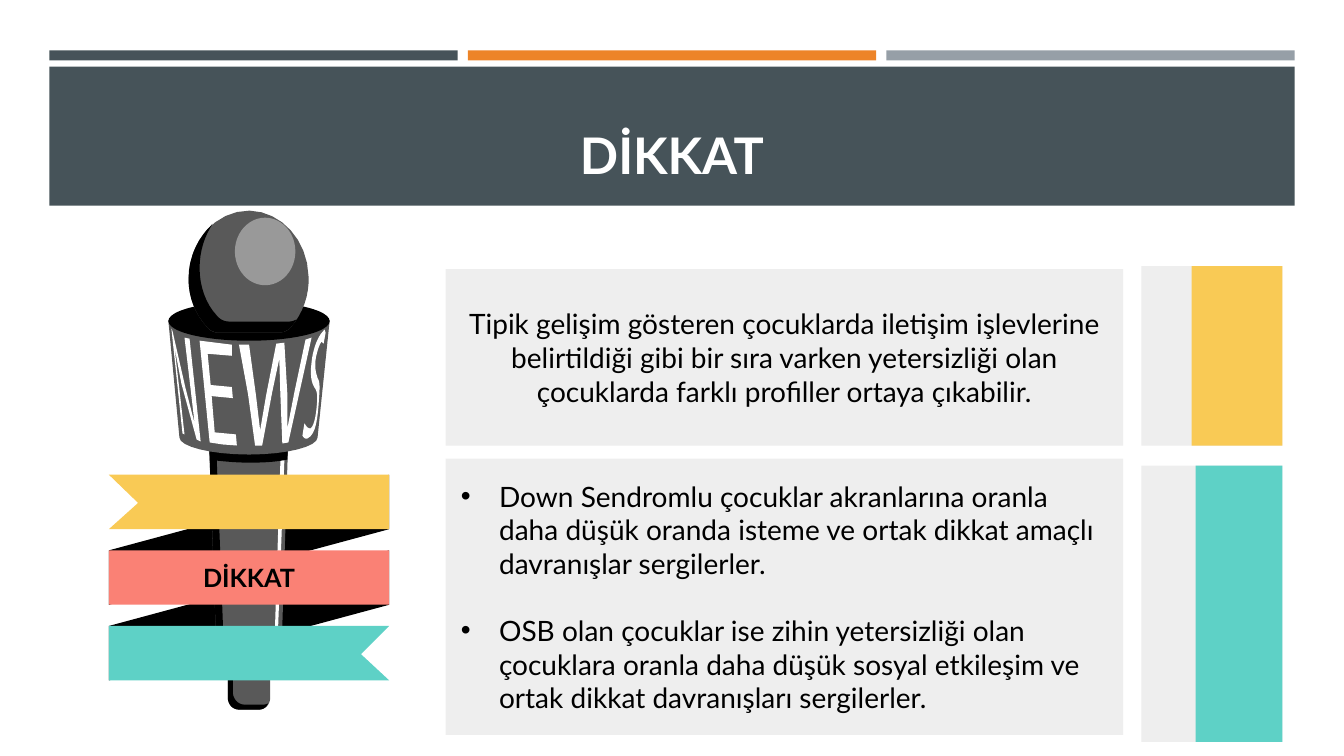
from lxml.etree import SubElement
from pptx import Presentation
from pptx.dml.color import RGBColor
from pptx.enum.shapes import MSO_SHAPE
from pptx.enum.text import MSO_ANCHOR, MSO_AUTO_SIZE, PP_ALIGN
from pptx.oxml.ns import qn
from pptx.util import Inches, Pt

HUES = {
    "slate": "465359", "orange": "ED8428", "steel": "969FA7",
    "pale": "EEEEEE", "yellow": "F9CA55", "coral": "FA8175",
    "teal": "5ED1C6", "dark": "595959", "glow": "999999",
    "black": "000000", "white": "FFFFFF",
}
FONT = "Lato"
RIBBON = (1.08, 4.71, 2.78, 0.54)
STEP = 0.75

# Microphone outlines: pairs are line ends, sixes are curves
STEM = [(0.59, 2.74), (0.59, 4.83), (0.59, 4.9, 0.64, 4.95, 0.7, 4.95),
        (0.9, 4.95), (0.96, 4.95, 1.01, 4.9, 1.01, 4.83), (1.01, 2.74)]
STEM_SHADE = [(0.59, 2.74), (0.59, 4.83), (0.59, 4.9, 0.64, 4.95, 0.7, 4.95),
              (0.9, 4.95), (0.94, 4.95, 0.97, 4.93, 0.99, 4.89),
              (0.98, 4.89, 0.97, 4.9, 0.95, 4.9), (0.75, 4.9),
              (0.69, 4.9, 0.64, 4.84, 0.64, 4.78), (0.64, 2.74)]
GRIP = [(0.4, 2.22), (0.48, 4.43), (0.48, 4.47, 0.62, 4.5, 0.8, 4.5),
        (0.98, 4.5, 1.12, 4.47, 1.12, 4.43), (1.19, 2.22)]
SHINE = [(1.12, 2.22), (1.05, 4.36), (1.08, 4.36), (1.16, 2.22)]
GRIP_SHADE = [(0.4, 2.22), (0.41, 2.47), (0.48, 4.43),
              (0.48, 4.47, 0.62, 4.5, 0.8, 4.5),
              (0.97, 4.5, 1.12, 4.47, 1.12, 4.44), (1.12, 4.39),
              (1.06, 4.4, 0.97, 4.41, 0.87, 4.41),
              (0.69, 4.41, 0.55, 4.39, 0.55, 4.35), (0.48, 2.48),
              (0.58, 2.49, 0.68, 2.5, 0.8, 2.5), (0.83, 2.5),
              (0.96, 2.5, 1.08, 2.49, 1.18, 2.47), (1.19, 2.22)]
CUP = [(0, 1.09), (0.11, 2.25), (0.11, 2.34, 0.42, 2.42, 0.8, 2.42),
       (1.18, 2.42, 1.48, 2.34, 1.48, 2.25), (1.6, 1.09)]
NEWS = [
    [(0.03, 1.17), (0.14, 2.21), (0.16, 2.22), (0.11, 1.78), (0.06, 1.35),
     (0.13, 1.72), (0.28, 2.27), (0.32, 2.29), (0.21, 1.27), (0.16, 1.26),
     (0.21, 1.68), (0.26, 2.11), (0.17, 1.76), (0.04, 1.19)],
    [(0.31, 1.29), (0.41, 2.3), (0.54, 2.32), (0.68, 2.33), (0.67, 2.22),
     (0.46, 2.2), (0.43, 1.84), (0.64, 1.86), (0.63, 1.75), (0.42, 1.73),
     (0.39, 1.42), (0.63, 1.44), (0.63, 1.33)],
    [(1.42, 1.26), (1.36, 1.28), (1.25, 1.8), (1.18, 2.16), (1.18, 1.82),
     (1.15, 1.31), (1.07, 1.32), (0.97, 1.83), (0.91, 2.18), (0.87, 1.84),
     (0.8, 1.33), (0.7, 1.33), (0.79, 1.82), (0.86, 2.33), (0.93, 2.33),
     (1.03, 1.8), (1.1, 1.47), (1.11, 1.8), (1.13, 2.31), (1.19, 2.3)],
    [(1.55, 1.18), (1.54, 1.19), (1.47, 1.26, 1.43, 1.4, 1.42, 1.51),
     (1.4, 1.66, 1.43, 1.73, 1.46, 1.77), (1.48, 1.81, 1.48, 1.86, 1.47, 1.96),
     (1.46, 2.06, 1.44, 2.14, 1.41, 2.16), (1.38, 2.16, 1.37, 2.14, 1.35, 2.11),
     (1.33, 2.23), (1.34, 2.25, 1.36, 2.27, 1.38, 2.26),
     (1.47, 2.22, 1.48, 2.03, 1.49, 1.93), (1.5, 1.78, 1.51, 1.7, 1.48, 1.66),
     (1.47, 1.62, 1.45, 1.58, 1.46, 1.48), (1.47, 1.41, 1.5, 1.32, 1.52, 1.3),
     (1.54, 1.32), (1.56, 1.21)],
]
HEAD = [(0.8, 0), (0.47, 0, 0.2, 0.3, 0.2, 0.68),
        (0.2, 0.86, 0.27, 1.03, 0.38, 1.15), (0.41, 1.19, 0.45, 1.21, 0.5, 1.21),
        (1.09, 1.21), (1.14, 1.21, 1.19, 1.19, 1.22, 1.15),
        (1.33, 1.02, 1.4, 0.84, 1.39, 0.65), (1.38, 0.29, 1.12, 0.01, 0.81, 0)]
HEAD_SHADE = [(0.44, 0.13), (0.3, 0.26, 0.2, 0.45, 0.2, 0.68),
              (0.2, 0.86, 0.27, 1.03, 0.38, 1.15),
              (0.41, 1.19, 0.46, 1.21, 0.5, 1.21), (1.09, 1.21),
              (1.14, 1.21, 1.19, 1.19, 1.22, 1.15),
              (1.24, 1.13, 1.26, 1.1, 1.27, 1.08),
              (1.25, 1.09, 1.22, 1.1, 1.2, 1.1), (0.6, 1.1),
              (0.56, 1.1, 0.51, 1.08, 0.48, 1.04),
              (0.37, 0.92, 0.31, 0.75, 0.31, 0.57),
              (0.31, 0.4, 0.36, 0.25, 0.44, 0.13)]


def tint(shape, hue):
    shape.fill.solid()
    shape.fill.fore_color.rgb = RGBColor.from_string(HUES[hue])


def paint(shape, hue):
    tint(shape, hue)
    shape.line.fill.background()
    shape.shadow.inherit = False
    return shape


def block(slide, box, hue, kind=MSO_SHAPE.RECTANGLE):
    return paint(slide.shapes.add_shape(kind, *map(Inches, box)), hue)


def curve(start, bend, steps=8):
    xs, ys = (start[0], *bend[::2]), (start[1], *bend[1::2])
    for i in range(1, steps + 1):
        t = i / steps
        parts = ((1 - t) ** 3, 3 * t * (1 - t) ** 2, 3 * t * t * (1 - t), t ** 3)
        yield tuple(sum(p * v for p, v in zip(parts, vs)) for vs in (xs, ys))


def outline(slide, left, top, hue, marks):
    dots = [marks[0]]
    for mark in marks[1:]:
        dots += [mark] if len(mark) == 2 else curve(dots[-1], mark)
    spots = [(Inches(left + x), Inches(top + y)) for x, y in dots]
    form = slide.shapes.build_freeform(*spots[0])
    form.add_line_segments(spots[1:], close=True)
    return paint(form.convert_to_shape(), hue)


def set_text(shape, lines, size, hue="black", bold=False, side=0.15, edge=0.1,
             align=PP_ALIGN.CENTER, anchor=MSO_ANCHOR.MIDDLE, bullet=False):
    frame = shape.text_frame
    frame.text = "\n".join(lines)
    frame.word_wrap = True
    frame.auto_size = MSO_AUTO_SIZE.NONE
    frame.vertical_anchor = anchor
    frame.margin_left = frame.margin_right = Inches(side)
    frame.margin_top = frame.margin_bottom = Inches(edge)
    for i, para in enumerate(frame.paragraphs):
        para.alignment = align
        para.space_before = Pt(24 if i else 0)
        if bullet:
            props = para._p.get_or_add_pPr()
            props.set("marL", str(Inches(0.38)))
            props.set("indent", str(-Inches(0.38)))
            SubElement(props, qn("a:buFont"), typeface="Arial")
            SubElement(props, qn("a:buChar"), char="•")
        for run in para.runs:
            run.font.name, run.font.size, run.font.bold = FONT, Pt(size), bold
            run.font.color.rgb = RGBColor.from_string(HUES[hue])


def place(shape, box):
    shape.left, shape.top, shape.width, shape.height = map(Inches, box)


# Three bars over a title band
def header(slide, box):
    left, top, wide, high = box
    for i, hue in enumerate(("slate", "orange", "steel")):
        block(slide, (left + i * 4.15, top, 4.05, 0.1), hue)
    band = block(slide, (left, top + 0.16, wide, high - 0.16), "slate")
    title = slide.shapes.title
    title.element.getparent().insert(2, band.element)
    place(title, (left + 0.15, top + 0.3, wide - 0.3, 1.08))
    set_text(title, ["DİKKAT"], 36, "white", True, 0.1, 0.05,
             anchor=MSO_ANCHOR.BOTTOM)


# Black ribbon folds behind the microphone
def folds(slide, box):
    left, top, wide, high = box
    for i in range(2):
        outline(slide, left, top + i * STEP, "black",
                [(wide, 0), (0, STEP), (0, STEP + high), (wide, high)])


def mic(slide, left, top):
    for hue, marks in (("dark", STEM), ("black", STEM_SHADE), ("dark", GRIP),
                       ("white", SHINE), ("black", GRIP_SHADE), ("dark", CUP),
                       *(("white", sign) for sign in NEWS)):
        outline(slide, left, top, hue, marks)
    block(slide, (left, top + 0.9, 1.6, 0.39), "black", MSO_SHAPE.OVAL)
    outline(slide, left, top, "dark", HEAD)
    outline(slide, left, top, "black", HEAD_SHADE)
    block(slide, (left + 0.66, top + 0.07, 0.6, 0.67), "glow", MSO_SHAPE.OVAL)


# Ribbon bands in front of the microphone
def bands(slide, box):
    left, top, wide, high = box
    ends = [(0, 0), (wide, 0), (wide, high), (0, high)]
    outline(slide, left, top, "yellow", ends + [(0.29, 0.28)])
    label = block(slide, (left, top + STEP, wide, high), "coral")
    set_text(label, ["DİKKAT"], 18, bold=True, side=0.1)
    outline(slide, left, top + 2 * STEP, "teal",
            ends[:2] + [(wide - 0.28, 0.28)] + ends[2:])


# Text panels
def panels(slide, left, wide):
    intro = block(slide, (left, 2.67, wide, 1.75), "pale")
    set_text(intro, ["Tipik gelişim gösteren çocuklarda iletişim işlevlerine belirtildiği gibi bir sıra varken yetersizliği olan çocuklarda farklı profiller ortaya çıkabilir."], 20)
    body = slide.placeholders[1]
    place(body, (left, 4.55, wide, 2.74))
    tint(body, "pale")
    set_text(body, [
        "Down Sendromlu çocuklar akranlarına oranla daha düşük oranda isteme ve ortak dikkat amaçlı davranışlar sergilerler.",
        "OSB olan çocuklar ise zihin yetersizliği olan çocuklara oranla daha düşük sosyal etkileşim ve ortak dikkat davranışları sergilerler.",
    ], 20, align=PP_ALIGN.LEFT, bullet=True)


# Pale tab with a coloured right part
def tab(slide, box, hue, part):
    left, top, wide, high = box
    block(slide, box, "pale")
    block(slide, (left + wide - part, top, part, high), hue)


def main():
    deck = Presentation()
    deck.slide_width, deck.slide_height = Inches(13.33), Inches(7.5)
    slide = deck.slides.add_slide(deck.slide_layouts[1])
    header(slide, (0.49, 0.5, 12.35, 1.54))
    folds(slide, RIBBON)
    mic(slide, 1.67, 2.09)
    bands(slide, RIBBON)
    panels(slide, 4.42, 6.72)
    tab(slide, (11.32, 2.64, 1.4, 1.78), "yellow", 0.9)
    tab(slide, (11.32, 4.62, 1.4, 2.74), "teal", 0.86)
    deck.save("out.pptx")


if __name__ == "__main__":
    main()
